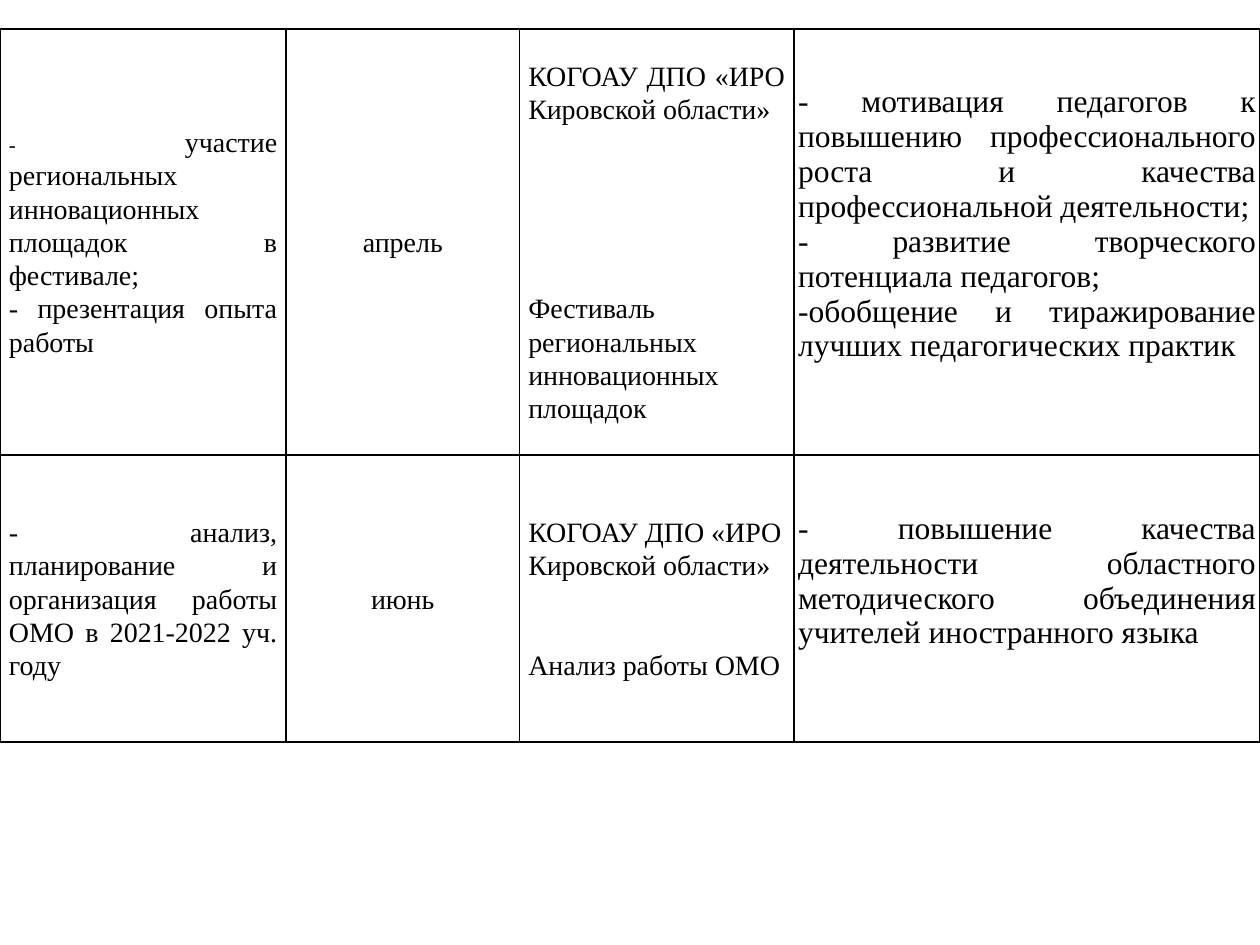
from dataclasses import dataclass

from lxml import etree
from pptx import Presentation
from pptx.dml.color import RGBColor
from pptx.enum.text import MSO_ANCHOR, PP_ALIGN
from pptx.oxml.ns import qn
from pptx.util import Cm, Pt

BLACK = RGBColor(0, 0, 0)
WHITE = RGBColor(255, 255, 255)
LEFT = PP_ALIGN.LEFT
CENTER = PP_ALIGN.CENTER
JUSTIFY = PP_ALIGN.JUSTIFY
MIDDLE = MSO_ANCHOR.MIDDLE
FONT_NAME = "Times New Roman"
BORDER_SIDES = ("lnL", "lnR", "lnT", "lnB")
BORDER_WIDTH = Pt(1)
COLUMN_WIDTHS = (Cm(5.77), Cm(4.7), Cm(5.54), Cm(9.39))
ROW_HEIGHTS = (Cm(8.59), Cm(5.79))
TABLE_TOP = Cm(0.58)


@dataclass(frozen=True)
class Run:
    text: str
    size: int


@dataclass(frozen=True)
class CellStyle:
    size: int
    line_spacing: float
    side_margin: Cm
    bottom_margin: Cm


@dataclass(frozen=True)
class CellContent:
    paragraphs: tuple
    style: CellStyle
    alignment: PP_ALIGN = JUSTIFY
    gap: float = 0


PLAN = CellStyle(16, 1.07, Cm(0.18), Cm(0))
RESULT = CellStyle(18, 1, Cm(0.08), Cm(0.71))
ORGANIZER = "КОГОАУ ДПО «ИРО Кировской области»"

ROWS = (
    (
        CellContent(
            (
                (
                    Run("- ", 12),
                    Run("участие региональных инновационных площадок в фестивале;", 16),
                ),
                "- презентация опыта работы",
            ),
            PLAN,
        ),
        CellContent(("апрель",), PLAN, CENTER),
        CellContent(
            (ORGANIZER, "Фестиваль региональных инновационных площадок"),
            PLAN,
            gap=95,
        ),
        CellContent(
            (
                "- мотивация педагогов к повышению профессионального роста "
                "и качества профессиональной деятельности;",
                "- развитие творческого потенциала педагогов;",
                "-обобщение и тиражирование лучших педагогических практик",
            ),
            RESULT,
        ),
    ),
    (
        CellContent(
            ("- анализ, планирование и организация работы ОМО в 2021-2022 уч. году",),
            PLAN,
        ),
        CellContent(("июнь",), PLAN, CENTER),
        CellContent((ORGANIZER, "Анализ работы ОМО"), PLAN, LEFT, 38),
        CellContent(
            (
                "- повышение качества деятельности областного методического "
                "объединения учителей иностранного языка",
            ),
            RESULT,
        ),
    ),
)


def apply_format(target, values: dict) -> None:
    for name, value in values.items():
        setattr(target, name, value)


def add_borders(cell) -> None:
    properties = cell._tc.get_or_add_tcPr()
    for index, side in enumerate(BORDER_SIDES):
        line = etree.Element(qn(f"a:{side}"), w=str(int(BORDER_WIDTH)))
        fill = etree.SubElement(line, qn("a:solidFill"))
        etree.SubElement(fill, qn("a:srgbClr"), val=str(BLACK))
        properties.insert(index, line)


def fill_cell(cell, content: CellContent) -> None:
    style = content.style
    apply_format(cell, {
        "margin_left": style.side_margin,
        "margin_right": style.side_margin,
        "margin_top": Cm(0),
        "margin_bottom": style.bottom_margin,
        "vertical_anchor": MIDDLE,
    })
    cell.fill.solid()
    cell.fill.fore_color.rgb = WHITE
    add_borders(cell)
    text_frame = cell.text_frame
    for index, item in enumerate(content.paragraphs):
        paragraph = text_frame.add_paragraph() if index else text_frame.paragraphs[0]
        apply_format(paragraph, {
            "alignment": content.alignment,
            "line_spacing": style.line_spacing,
            "space_before": Pt(content.gap if index else 0),
        })
        runs = (Run(item, style.size),) if isinstance(item, str) else item
        for part in runs:
            run = paragraph.add_run()
            run.text = part.text
            apply_format(run.font, {"name": FONT_NAME, "size": Pt(part.size)})
            run.font.color.rgb = BLACK


def add_plan_table(slide) -> None:
    table = slide.shapes.add_table(
        len(ROW_HEIGHTS), len(COLUMN_WIDTHS),
        Cm(0), TABLE_TOP, sum(COLUMN_WIDTHS), sum(ROW_HEIGHTS),
    ).table
    apply_format(table, {"first_row": False, "horz_banding": False})
    for column, width in zip(table.columns, COLUMN_WIDTHS):
        column.width = width
    for row, height, contents in zip(table.rows, ROW_HEIGHTS, ROWS):
        row.height = height
        for cell, content in zip(row.cells, contents):
            fill_cell(cell, content)


def main() -> None:
    presentation = Presentation()
    apply_format(presentation, {"slide_width": Cm(25.4), "slide_height": Cm(19.05)})
    slide = presentation.slides.add_slide(presentation.slide_layouts[6])
    add_plan_table(slide)
    presentation.save("out.pptx")


if __name__ == "__main__":
    main()
